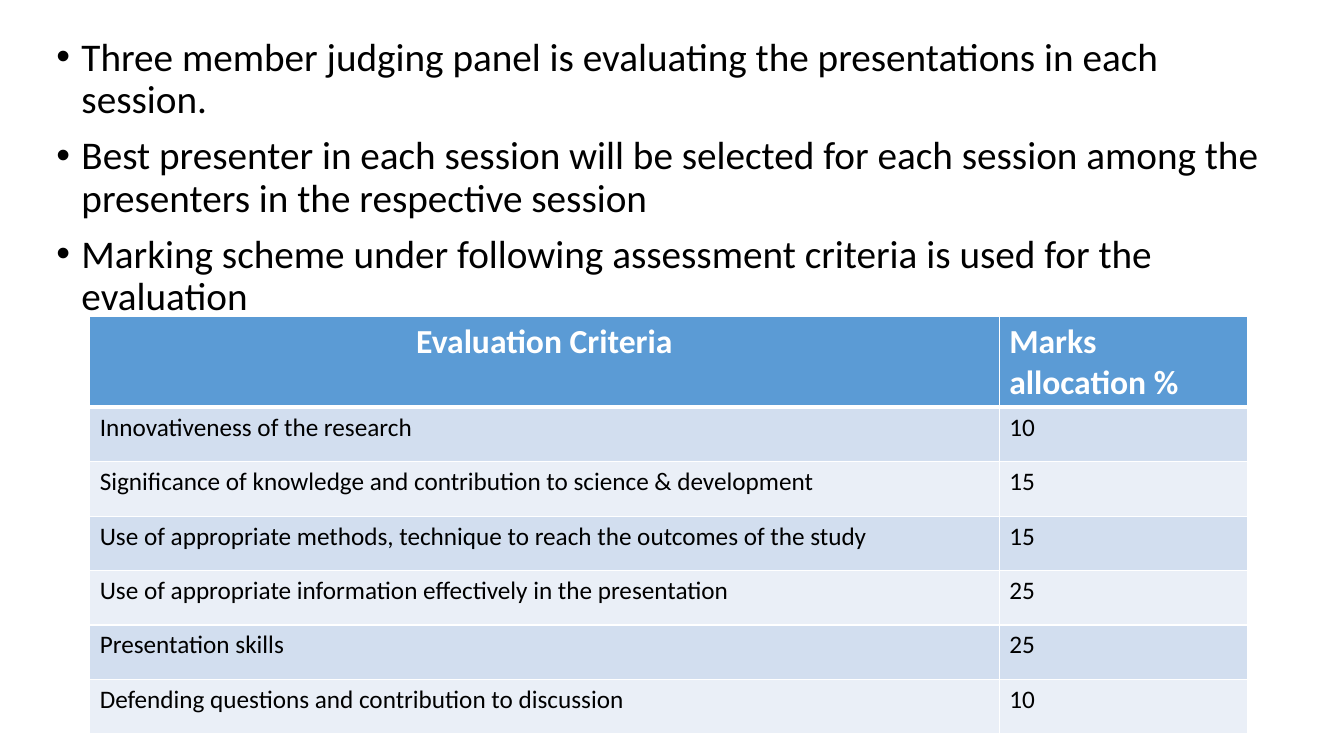
from dataclasses import dataclass

from lxml import etree
from pptx import Presentation
from pptx.dml.color import RGBColor
from pptx.enum.text import PP_ALIGN
from pptx.oxml.ns import qn
from pptx.util import Inches, Pt

LEFT = PP_ALIGN.LEFT
CENTER = PP_ALIGN.CENTER

BLACK = RGBColor(0x00, 0x00, 0x00)
WHITE = RGBColor(0xFF, 0xFF, 0xFF)
HEADER_BLUE = RGBColor(0x5B, 0x9B, 0xD5)
BANDS = (RGBColor(0xD2, 0xDE, 0xEF), RGBColor(0xEA, 0xEF, 0xF7))

FONT = "Calibri"
COLUMN_WIDTHS = (9.02, 2.46)
HEADER_HEIGHT = 0.82
ROW_HEIGHT = 0.54
THIN, THICK = 1, 3


@dataclass(frozen=True)
class Criterion:
    name: str
    marks: int


JUDGING_NOTES = (
    "Three member judging panel is evaluating the presentations in each session.",
    "Best presenter in each session will be selected for each session among the "
    "presenters in the respective session",
    "Marking scheme under following assessment criteria is used for the evaluation",
)
CRITERIA = (
    Criterion("Innovativeness of the research", 10),
    Criterion("Significance of knowledge and contribution to science & development", 15),
    Criterion("Use of appropriate methods, technique to reach the outcomes of the study", 15),
    Criterion("Use of appropriate information effectively in the presentation", 25),
    Criterion("Presentation skills", 25),
    Criterion("Defending questions and contribution to discussion", 10),
)


def write_text(para, text: str, *, size: int, color=BLACK, bold=False, align=LEFT) -> None:
    para.alignment = align
    span = para.add_run()
    span.text = text
    span.font.name = FONT
    span.font.size = Pt(size)
    span.font.bold = bold
    span.font.color.rgb = color


def add_bullet(para) -> None:
    para.line_spacing = 0.9
    para.space_before = Pt(10)
    properties = para._p.get_or_add_pPr()
    properties.set("marL", str(Inches(0.25)))
    properties.set("indent", str(Inches(-0.25)))
    etree.SubElement(properties, qn("a:buFont"), typeface="Arial")
    etree.SubElement(properties, qn("a:buChar"), char="•")


def add_borders(cell, *, top: int, bottom: int) -> None:
    properties = cell._tc.get_or_add_tcPr()
    widths = {"lnL": THIN, "lnR": THIN, "lnT": top, "lnB": bottom}
    for side, width in widths.items():
        line = etree.SubElement(properties, qn(f"a:{side}"), w=str(Pt(width)))
        fill = etree.SubElement(line, qn("a:solidFill"))
        etree.SubElement(fill, qn("a:srgbClr"), val=str(WHITE))


def add_judging_notes(page) -> None:
    box = page.shapes.add_textbox(Inches(0.46), Inches(0.32), Inches(12.31), Inches(6.69))
    frame = box.text_frame
    frame.word_wrap = True
    for index, note in enumerate(JUDGING_NOTES):
        para = frame.add_paragraph() if index else frame.paragraphs[0]
        write_text(para, note, size=28)
        add_bullet(para)


def add_criteria_table(page) -> None:
    rows = [("Evaluation Criteria", "Marks allocation %")]
    rows += [(criterion.name, str(criterion.marks)) for criterion in CRITERIA]
    height = HEADER_HEIGHT + ROW_HEIGHT * len(CRITERIA)
    table = page.shapes.add_table(
        len(rows), len(COLUMN_WIDTHS), Inches(0.89), Inches(3.14),
        Inches(sum(COLUMN_WIDTHS)), Inches(height),
    ).table
    for column, width in zip(table.columns, COLUMN_WIDTHS):
        column.width = Inches(width)
    for row_index, texts in enumerate(rows):
        header = row_index == 0
        table.rows[row_index].height = Inches(HEADER_HEIGHT if header else ROW_HEIGHT)
        for column_index, text in enumerate(texts):
            cell = table.cell(row_index, column_index)
            add_borders(
                cell,
                top=THICK if row_index == 1 else THIN,
                bottom=THICK if header else THIN,
            )
            cell.fill.solid()
            cell.fill.fore_color.rgb = HEADER_BLUE if header else BANDS[(row_index - 1) % 2]
            write_text(
                cell.text_frame.paragraphs[0], text,
                size=24 if header else 18,
                color=WHITE if header else BLACK,
                bold=header,
                align=CENTER if header and column_index == 0 else LEFT,
            )


def main() -> None:
    deck = Presentation()
    deck.slide_width = Inches(13.33)
    deck.slide_height = Inches(7.5)
    page = deck.slides.add_slide(deck.slide_layouts[6])
    add_judging_notes(page)
    add_criteria_table(page)
    deck.save("out.pptx")


if __name__ == "__main__":
    main()
